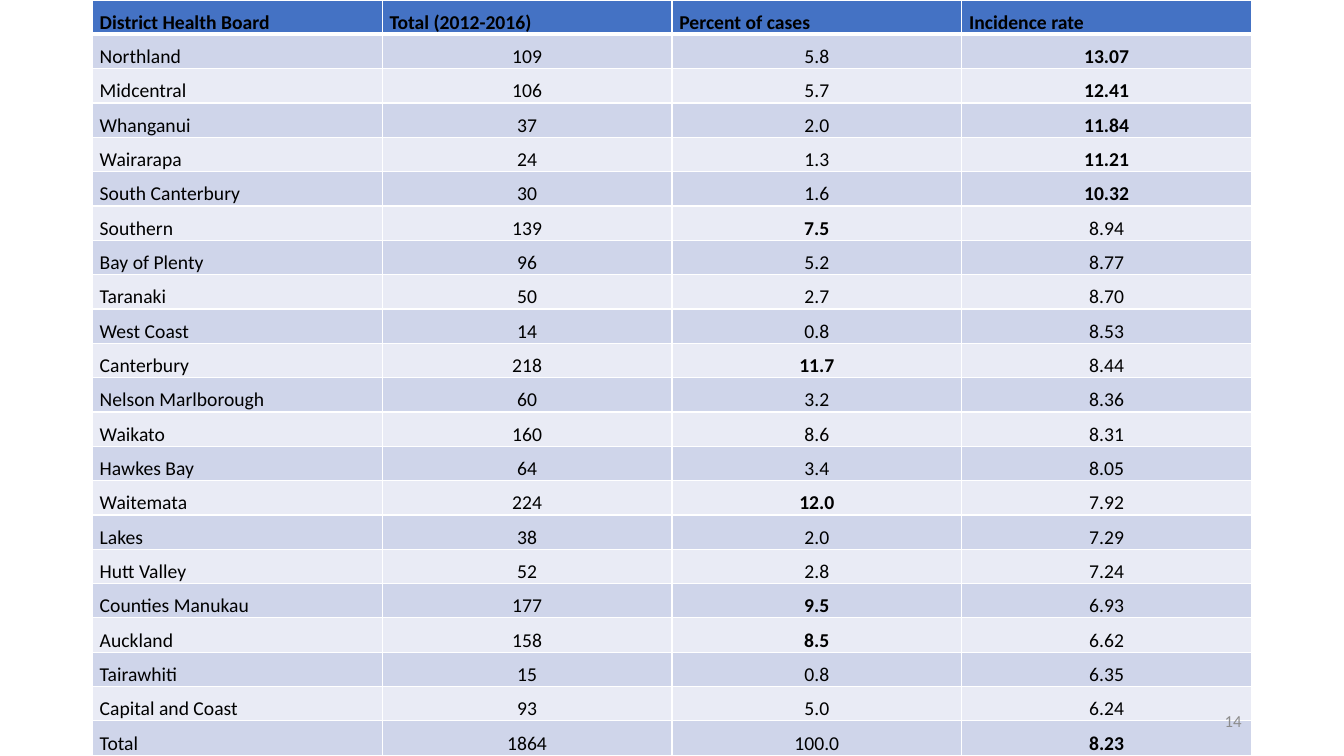
"""Build a slide tabulating cases and incidence rates by District Health Board."""
import dataclasses

import lxml.etree
import pptx
import pptx.dml.color
import pptx.enum.text
import pptx.oxml.ns
import pptx.slide
import pptx.table
import pptx.text.text
import pptx.util

PX = 9525
SLIDE_WIDTH, SLIDE_HEIGHT = 1280, 720
TABLE_LEFT, TABLE_WIDTH = 88, 1104
CELL_MARGIN = 7
ALIGN = pptx.enum.text.PP_ALIGN
ANCHOR = pptx.enum.text.MSO_ANCHOR


@dataclasses.dataclass(frozen=True)
class Theme:
    """Colours, font, type sizes and rule widths."""
    font: str = "Calibri"
    text: str = "000000"
    muted: str = "8C8C8C"
    header: str = "4472C4"
    bands: tuple[str, str] = ("CFD5EA", "E9EBF5")
    rule: str = "FFFFFF"
    body_size: int = 14
    number_size: int = 12
    thin: int = 1
    thick: int = 3
    line_spacing: float = 1.07


@dataclasses.dataclass(frozen=True)
class District:
    """Cases and incidence of one board, with the figure to emphasise."""
    name: str
    total: str
    percent: str
    rate: str
    emphasis: str = ""


THEME = Theme()
HEADINGS = ("District Health Board", "Total (2012-2016)", "Percent of cases", "Incidence rate")
FIELDS = ("name", "total", "percent", "rate")
DISTRICTS = (
    District("Northland", "109", "5.8", "13.07", "rate"),
    District("Midcentral", "106", "5.7", "12.41", "rate"),
    District("Whanganui", "37", "2.0", "11.84", "rate"),
    District("Wairarapa", "24", "1.3", "11.21", "rate"),
    District("South Canterbury", "30", "1.6", "10.32", "rate"),
    District("Southern", "139", "7.5", "8.94", "percent"),
    District("Bay of Plenty", "96", "5.2", "8.77"),
    District("Taranaki", "50", "2.7", "8.70"),
    District("West Coast", "14", "0.8", "8.53"),
    District("Canterbury", "218", "11.7", "8.44", "percent"),
    District("Nelson Marlborough", "60", "3.2", "8.36"),
    District("Waikato", "160", "8.6", "8.31"),
    District("Hawkes Bay", "64", "3.4", "8.05"),
    District("Waitemata", "224", "12.0", "7.92", "percent"),
    District("Lakes", "38", "2.0", "7.29"),
    District("Hutt Valley", "52", "2.8", "7.24"),
    District("Counties Manukau", "177", "9.5", "6.93", "percent"),
    District("Auckland", "158", "8.5", "6.62", "percent"),
    District("Tairawhiti", "15", "0.8", "6.35"),
    District("Capital and Coast", "93", "5.0", "6.24"),
    District("Total", "1864", "100.0", "8.23", "rate"),
)


def write_text(frame: pptx.text.text.TextFrame, text: str, *, size: int = THEME.body_size,
               color: str = THEME.text, bold: bool = False, align: ALIGN = ALIGN.LEFT,
               spacing: float = 1.0) -> None:
    """Write one formatted paragraph."""
    paragraph = frame.paragraphs[0]
    paragraph.alignment = align
    paragraph.line_spacing = spacing
    run = paragraph.add_run()
    run.text = text
    run.font.name = THEME.font
    run.font.size = pptx.util.Pt(size)
    run.font.bold = bold
    run.font.color.rgb = pptx.dml.color.RGBColor.from_string(color)


def add_rules(cell: pptx.table._Cell, top: int, bottom: int) -> None:
    """Draw the four borders of a cell."""
    properties = cell._tc.get_or_add_tcPr()
    qn = pptx.oxml.ns.qn
    widths = {"a:lnL": THEME.thin, "a:lnR": THEME.thin, "a:lnT": top, "a:lnB": bottom}
    for side, width in widths.items():
        line = lxml.etree.SubElement(properties, qn(side), w=str(pptx.util.Pt(width)))
        fill = lxml.etree.SubElement(line, qn("a:solidFill"))
        lxml.etree.SubElement(fill, qn("a:srgbClr"), val=THEME.rule)


def fill_cell(cell: pptx.table._Cell, text: str, *, fill: str, bold: bool,
              align: ALIGN = ALIGN.LEFT, top: int = THEME.thin,
              bottom: int = THEME.thin) -> None:
    """Format a table cell and write its text."""
    cell.margin_left = cell.margin_right = CELL_MARGIN * PX
    cell.margin_top = cell.margin_bottom = 0
    cell.vertical_anchor = ANCHOR.BOTTOM
    add_rules(cell, top, bottom)
    cell.fill.solid()
    cell.fill.fore_color.rgb = pptx.dml.color.RGBColor.from_string(fill)
    write_text(cell.text_frame, text, bold=bold, align=align, spacing=THEME.line_spacing)


def add_incidence_table(slide: pptx.slide.Slide) -> None:
    """Add the table of districts."""
    row_count = len(DISTRICTS) + 1
    table = slide.shapes.add_table(row_count, len(HEADINGS), TABLE_LEFT * PX, 0,
                                   TABLE_WIDTH * PX, SLIDE_HEIGHT * PX).table
    table.first_row = table.horz_banding = False
    for column in table.columns:
        column.width = TABLE_WIDTH * PX // len(HEADINGS)
    for row in table.rows:
        row.height = SLIDE_HEIGHT * PX // row_count
    for column_index, heading in enumerate(HEADINGS):
        fill_cell(table.cell(0, column_index), heading, fill=THEME.header, bold=True,
                  bottom=THEME.thick)
    for row_index, district in enumerate(DISTRICTS):
        for column_index, field in enumerate(FIELDS):
            fill_cell(table.cell(row_index + 1, column_index), getattr(district, field),
                      fill=THEME.bands[row_index % 2], bold=field == district.emphasis,
                      align=ALIGN.LEFT if field == "name" else ALIGN.CENTER,
                      top=THEME.thin if row_index else THEME.thick)


def add_slide_number(slide: pptx.slide.Slide) -> None:
    """Add the slide number at the bottom right."""
    frame = slide.shapes.add_textbox(904 * PX, 667 * PX, 288 * PX, 38 * PX).text_frame
    frame.word_wrap = True
    frame.vertical_anchor = ANCHOR.MIDDLE
    write_text(frame, "14", size=THEME.number_size, color=THEME.muted, align=ALIGN.RIGHT)


def main() -> None:
    """Create and save the presentation."""
    presentation = pptx.Presentation()
    presentation.slide_width = SLIDE_WIDTH * PX
    presentation.slide_height = SLIDE_HEIGHT * PX
    slide = presentation.slides.add_slide(presentation.slide_layouts[6])
    add_incidence_table(slide)
    add_slide_number(slide)
    presentation.save("out.pptx")


if __name__ == "__main__":
    main()
